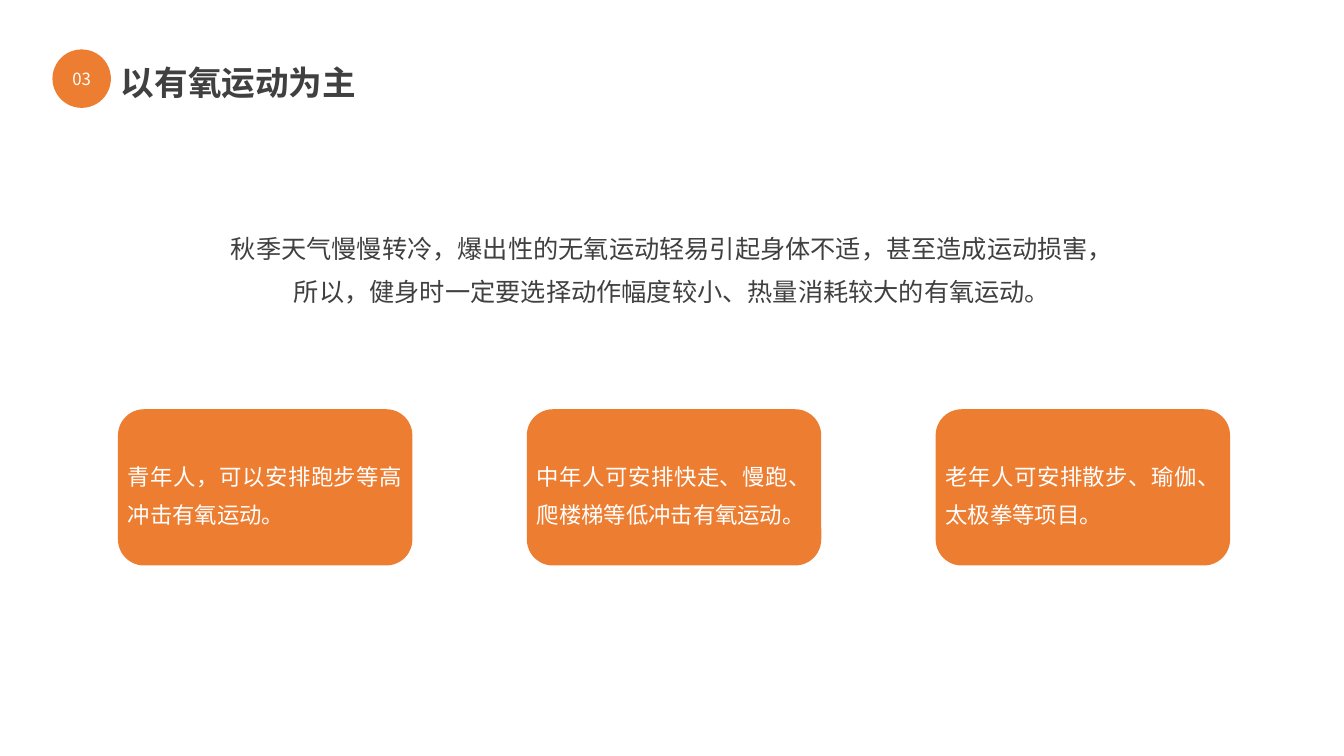
from lxml import etree
from pptx import Presentation
from pptx.dml.color import RGBColor
from pptx.enum.shapes import MSO_SHAPE as Shape
from pptx.enum.text import MSO_ANCHOR as Anchor, PP_ALIGN as Align
from pptx.oxml.ns import qn
from pptx.util import Inches, Pt

NUMBER = "03"
TITLE = "以有氧运动为主"
SUMMARY = (
    "秋季天气慢慢转冷，爆出性的无氧运动轻易引起身体不适，甚至造成运动损害，"
    "所以，健身时一定要选择动作幅度较小、热量消耗较大的有氧运动。"
)
AGE_GROUPS = [
    "青年人，可以安排跑步等高冲击有氧运动。",
    "中年人可安排快走、慢跑、爬楼梯等低冲击有氧运动。",
    "老年人可安排散步、瑜伽、太极拳等项目。",
]

COLORS = {"accent": "ED7D31", "dark": "404040", "light": "FFFFFF"}
FONT = "Noto Sans CJK SC"
WIDTH, HEIGHT = 13.33, 7.5

CARD_LEFT, CARD_TOP = 1.17, 4.06
CARD_WIDTH, CARD_HEIGHT = 2.92, 1.55
CARD_STEP = 4.055
CARD_TEXT_TOP, CARD_TEXT_HEIGHT = 4.44, 0.81


def write(box, text, size, color, align=Align.LEFT, anchor=Anchor.TOP,
          bold=False, spacing=1.4):
    frame = box.text_frame
    frame.word_wrap = True
    frame.vertical_anchor = anchor
    para = frame.paragraphs[0]
    para.alignment = align
    para.line_spacing = spacing
    span = para.add_run()
    span.text = text
    span.font.name = FONT
    span.font.size = Pt(size)
    span.font.bold = bold
    span.font.color.rgb = RGBColor.from_string(COLORS[color])
    # Chinese glyphs take their typeface from a:ea, not a:latin
    east_asian = etree.SubElement(span.font._element, qn("a:ea"))
    east_asian.set("typeface", FONT)


def add_label(page, place, text, **style):
    box = page.shapes.add_textbox(*map(Inches, place))
    write(box, text, **style)


def add_solid(page, kind, place):
    shape = page.shapes.add_shape(kind, *map(Inches, place))
    shape.shadow.inherit = False
    shape.fill.solid()
    shape.fill.fore_color.rgb = RGBColor.from_string(COLORS["accent"])
    shape.line.fill.background()
    return shape


def main():
    deck = Presentation()
    deck.slide_width, deck.slide_height = Inches(WIDTH), Inches(HEIGHT)
    page = deck.slides.add_slide(deck.slide_layouts[6])

    badge = add_solid(page, Shape.OVAL, (0.52, 0.49, 0.58, 0.58))
    write(badge, NUMBER, size=12, color="light", align=Align.CENTER,
          anchor=Anchor.MIDDLE, spacing=1.0)
    add_label(page, (1.1, 0.43, 3.82, 0.61), TITLE, size=24, color="dark",
              anchor=Anchor.MIDDLE, bold=True)
    add_label(page, (2.12, 2.15, 9.09, 0.9), SUMMARY, size=18, color="dark",
              align=Align.CENTER)

    for column, advice in enumerate(AGE_GROUPS):
        left = CARD_LEFT + column * CARD_STEP
        add_solid(page, Shape.ROUNDED_RECTANGLE,
                  (left, CARD_TOP, CARD_WIDTH, CARD_HEIGHT))
        add_label(page, (left, CARD_TEXT_TOP, CARD_WIDTH, CARD_TEXT_HEIGHT),
                  advice, size=16, color="light", align=Align.JUSTIFY)

    deck.save("out.pptx")


if __name__ == "__main__":
    main()
